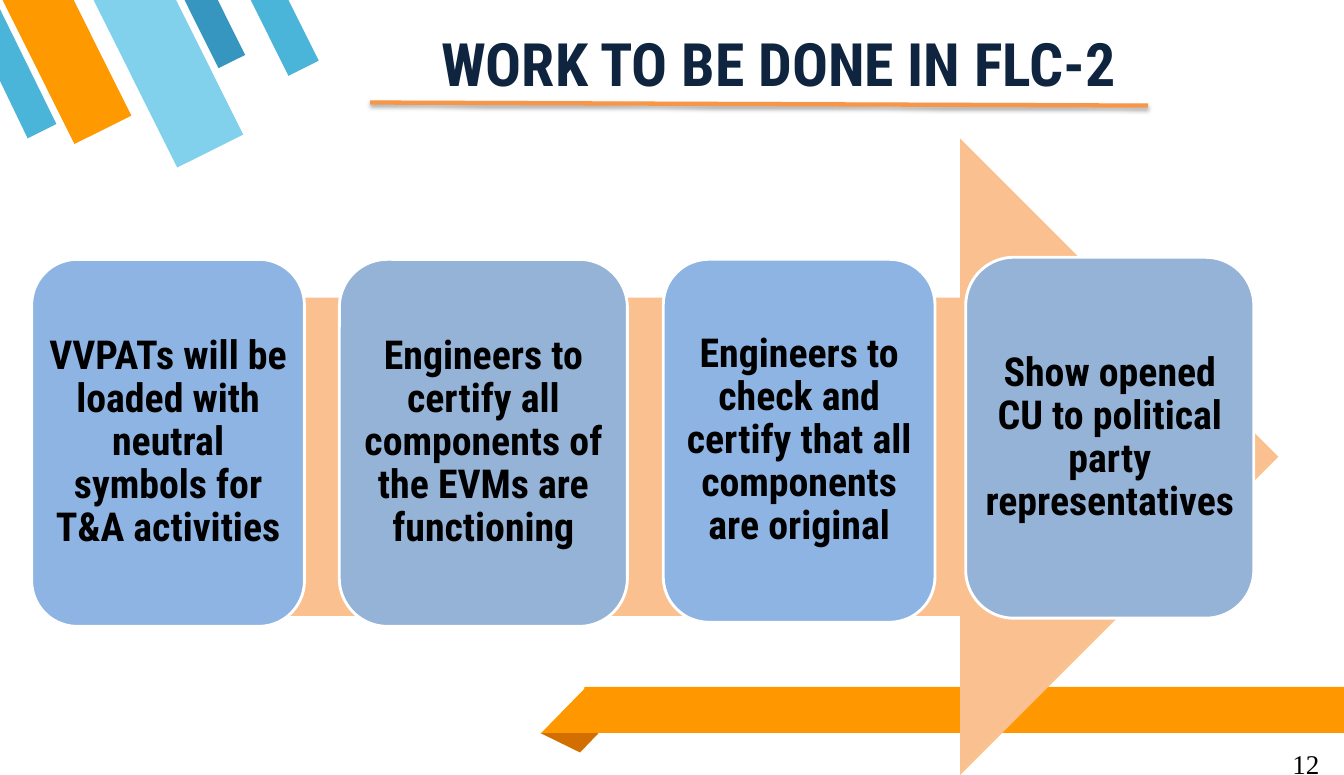
from lxml import etree
from pptx import Presentation
from pptx import util as u
from pptx.dml.color import RGBColor
from pptx.enum import shapes, text
from pptx.oxml import ns

PX = 9144
SHAPE = shapes.MSO_SHAPE

presentation = Presentation()
presentation.slide_width = 1311 * PX
presentation.slide_height = 756 * PX
slide = presentation.slides.add_slide(presentation.slide_layouts[6])


def add_block(kind, box, fill, rotation=0, flip=False):
    shape = slide.shapes.add_shape(kind, *[length * PX for length in box])
    shape.shadow.inherit = False
    shape.fill.solid()
    shape.fill.fore_color.rgb = RGBColor.from_string(fill)
    shape.line.fill.background()
    shape.rotation = rotation
    if flip:
        shape._element.spPr.xfrm.set("flipH", "1")
    return shape


def write(shape, words, size, font, color, align, anchor, margins):
    frame = shape.text_frame
    frame.word_wrap = True
    frame.vertical_anchor = anchor
    frame.margin_left = frame.margin_right = margins[0] * PX
    frame.margin_top = frame.margin_bottom = margins[1] * PX
    paragraph = frame.paragraphs[0]
    paragraph.text = words
    paragraph.alignment = align
    paragraph.font.size = u.Pt(size)
    paragraph.font.name = font
    paragraph.font.color.rgb = RGBColor.from_string(color)
    return paragraph


stripes = [
    ((195, -11, 29, 75), "3796BF"),
    ((34, -24, 62, 159), "FF9900"),
    ((128, -27, 72, 184), "81D1EC"),
    ((261, -13, 33, 84), "4BB5D9"),
]
for box, fill in stripes:
    add_block(SHAPE.FLOWCHART_MANUAL_INPUT, box, fill, rotation=333.5, flip=True)

builder = slide.shapes.build_freeform(27, 135, scale=PX)
builder.add_line_segments([(55, 121), (0, 9), (0, 79)], close=True)
edge_stripe = builder.convert_to_shape()
edge_stripe.shadow.inherit = False
edge_stripe.fill.solid()
edge_stripe.fill.fore_color.rgb = RGBColor.from_string("4BB5D9")
edge_stripe.line.fill.background()

fold = add_block(SHAPE.ISOSCELES_TRIANGLE, (527, 715, 57, 19), "D26F00", rotation=180)
fold.adjustments[0] = 0.32
add_block(SHAPE.RECTANGLE, (570, 670, 741, 45), "FF9800")
add_block(SHAPE.RIGHT_TRIANGLE, (528, 670, 44, 45), "FF9800", flip=True)

add_block(SHAPE.RIGHT_ARROW, (130, 135, 1117, 621), "FAC090")

cards = [
    ((31, 253, 266, 358), "8EB4E3", "VVPATs will be loaded with neutral symbols for T&A activities"),
    ((331, 253, 281, 358), "95B3D7", "Engineers to certify all components of the EVMs are functioning"),
    ((647, 253, 265, 354), "8EB4E3", "Engineers to check and certify that all components are original"),
    ((942, 251, 281, 352), "95B3D7", "Show opened CU to political party representatives"),
]
for box, fill, words in cards:
    card = add_block(SHAPE.ROUNDED_RECTANGLE, box, fill)
    card.line.color.rgb = RGBColor.from_string("FFFFFF")
    card.line.width = u.Pt(2)
    paragraph = write(card, words, 28, "Roboto Condensed", "000000",
                      text.PP_ALIGN.CENTER, text.MSO_ANCHOR.MIDDLE, (1, 1))
    paragraph.line_spacing = 0.9
    paragraph.font.bold = True

number = slide.shapes.add_textbox(1027 * PX, 722 * PX, 273 * PX, 50 * PX)
write(number, "12", 19, "Times New Roman", "000000",
      text.PP_ALIGN.RIGHT, text.MSO_ANCHOR.TOP, (13, 7))

title = slide.shapes.add_textbox(336 * PX, 8 * PX, 847 * PX, 106 * PX)
heading = write(title, "WORK TO BE DONE IN FLC-2", 42, "Roboto Condensed", "0F243E",
                text.PP_ALIGN.CENTER, text.MSO_ANCHOR.MIDDLE, (13, 7))
heading.font.bold = True

underline = slide.shapes.add_connector(
    shapes.MSO_CONNECTOR.STRAIGHT, 361 * PX, 100 * PX, 1120 * PX, 103 * PX)
underline.line.color.rgb = RGBColor.from_string("F79646")
underline.line.width = u.Pt(3)
effects = etree.SubElement(underline._element.spPr, ns.qn("a:effectLst"))
shadow = etree.SubElement(effects, ns.qn("a:outerShdw"), blurRad=str(u.Pt(3.1)),
                          dist=str(u.Pt(1.8)), dir="5400000", rotWithShape="0")
shadow_color = etree.SubElement(shadow, ns.qn("a:srgbClr"), val="000000")
etree.SubElement(shadow_color, ns.qn("a:alpha"), val="35000")

presentation.save("out.pptx")
